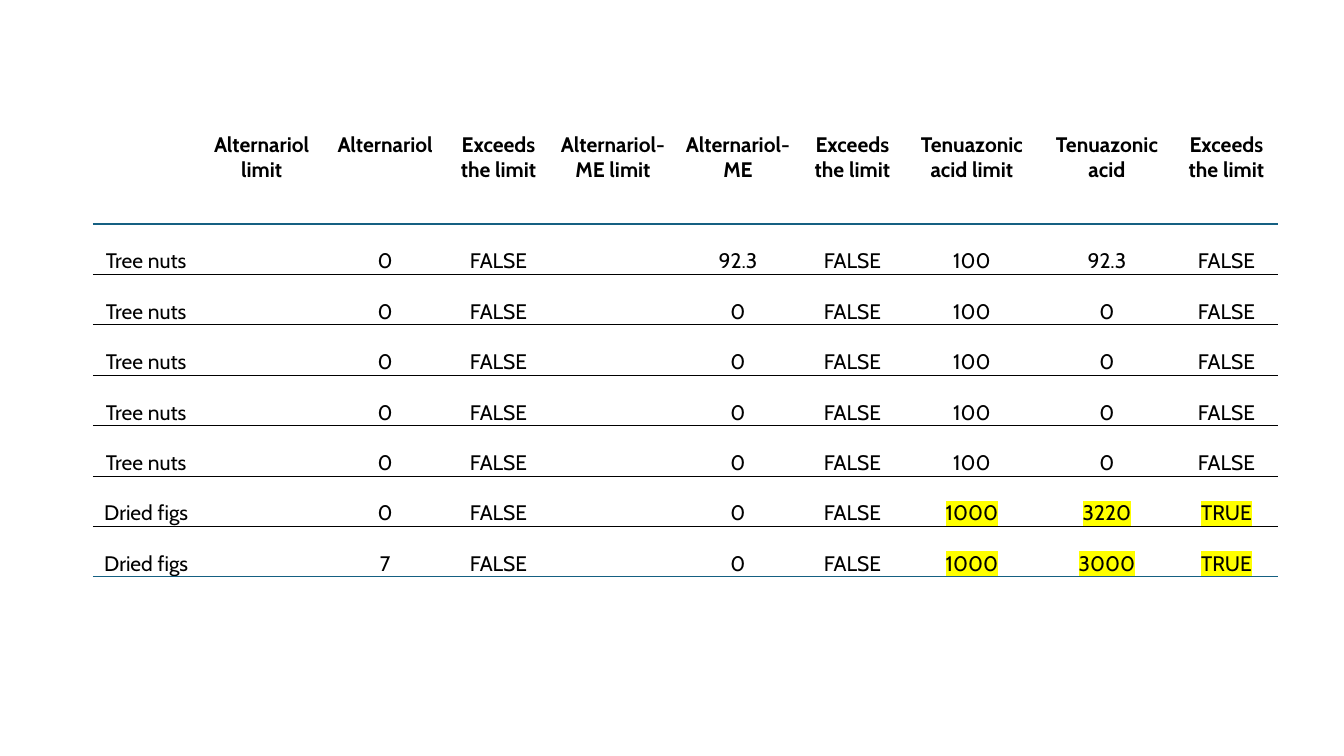
from dataclasses import dataclass

from lxml import etree
from pptx import Presentation
from pptx.dml.color import RGBColor
from pptx.enum.text import MSO_ANCHOR, PP_ALIGN
from pptx.oxml.ns import qn
from pptx.util import Inches, Pt

CENTER = PP_ALIGN.CENTER
TOP = MSO_ANCHOR.TOP
BOTTOM = MSO_ANCHOR.BOTTOM
BLANK_LAYOUT = 6
NO_STYLE_NO_GRID = "{2D5ABB26-0587-4C30-8999-92F81FD0307C}"


@dataclass(frozen=True)
class Theme:
    font: str = "Cabin"
    size: float = 15
    ink: str = "000000"
    accent: str = "156082"
    highlight: str = "FFFF00"
    hairline: float = 0.25
    header_rule: float = 1.5
    closing_rule: float = 1


THEME = Theme()

HEADERS = [
    "", "Alternariol limit", "Alternariol", "Exceeds the limit",
    "Alternariol-ME limit", "Alternariol-ME", "Exceeds the limit",
    "Tenuazonic acid limit", "Tenuazonic acid", "Exceeds the limit",
]
COLUMN_WIDTHS = [1.06, 1.23, 1.22, 1.03, 1.24, 1.24, 1.03, 1.34, 1.34, 1.03]
HEADER_HEIGHT = 0.92
SAMPLE_HEIGHT = 0.5
TENUAZONIC_START = 7


def sample(food, alternariol, alternariol_me, limit, tenuazonic, exceeds="FALSE"):
    return [food, "", alternariol, "FALSE", "", alternariol_me, "FALSE",
            limit, tenuazonic, exceeds]


SAMPLES = [
    sample("Tree nuts", "0", "92.3", "100", "92.3"),
    *[sample("Tree nuts", "0", "0", "100", "0") for _ in range(4)],
    sample("Dried figs", "0", "0", "1000", "3220", "TRUE"),
    sample("Dried figs", "7", "0", "1000", "3000", "TRUE"),
]


def add_color(parent, color):
    etree.SubElement(parent, qn("a:srgbClr"), val=color)


def set_borders(cell, top, bottom):
    properties = cell._tc.get_or_add_tcPr()
    sides = [("a:lnL", None), ("a:lnR", None), ("a:lnT", top), ("a:lnB", bottom)]
    for position, (side, rule) in enumerate(sides):
        line = etree.Element(qn(side))
        if rule:
            color, width = rule
            line.set("w", str(Pt(width)))
            add_color(etree.SubElement(line, qn("a:solidFill")), color)
        else:
            etree.SubElement(line, qn("a:noFill"))
        properties.insert(position, line)


def highlight_run(run):
    marker = etree.Element(qn("a:highlight"))
    add_color(marker, THEME.highlight)
    run._r.rPr.find(qn("a:solidFill")).addnext(marker)


def write_cell(cell, text, anchor, bold, highlighted):
    cell.fill.background()
    cell.vertical_anchor = anchor
    cell.margin_left = cell.margin_right = cell.margin_top = Inches(0.01)
    cell.margin_bottom = 0
    paragraph = cell.text_frame.paragraphs[0]
    paragraph.alignment = CENTER
    if not text:
        return
    run = paragraph.add_run()
    run.text = text
    run.font.name = THEME.font
    run.font.size = Pt(THEME.size)
    run.font.bold = bold
    run.font.color.rgb = RGBColor.from_string(THEME.ink)
    if highlighted:
        highlight_run(run)


def add_limits_table(slide):
    rows = [HEADERS, *SAMPLES]
    heights = [HEADER_HEIGHT] + [SAMPLE_HEIGHT] * len(SAMPLES)
    table = slide.shapes.add_table(
        len(rows), len(HEADERS), Inches(0.92), Inches(1.3),
        Inches(sum(COLUMN_WIDTHS)), Inches(sum(heights))).table
    table.first_row = False
    table.horz_banding = False
    table._tbl.tblPr.find(qn("a:tableStyleId")).text = NO_STYLE_NO_GRID

    for column, width in zip(table.columns, COLUMN_WIDTHS):
        column.width = Inches(width)
    for row, height in zip(table.rows, heights):
        row.height = Inches(height)

    hairline = (THEME.ink, THEME.hairline)
    header_rule = (THEME.accent, THEME.header_rule)
    closing_rule = (THEME.accent, THEME.closing_rule)
    rules = [None, header_rule, *[hairline] * (len(SAMPLES) - 1), closing_rule]

    for r, values in enumerate(rows):
        is_header = r == 0
        over_limit = values[-1] == "TRUE"
        for c, text in enumerate(values):
            cell = table.cell(r, c)
            write_cell(cell, text, TOP if is_header else BOTTOM, is_header,
                       over_limit and c >= TENUAZONIC_START)
            set_borders(cell, rules[r], rules[r + 1])


def main():
    presentation = Presentation()
    presentation.slide_width = Inches(13.33)
    presentation.slide_height = Inches(7.5)
    slide = presentation.slides.add_slide(presentation.slide_layouts[BLANK_LAYOUT])
    add_limits_table(slide)
    presentation.save("out.pptx")


if __name__ == "__main__":
    main()
